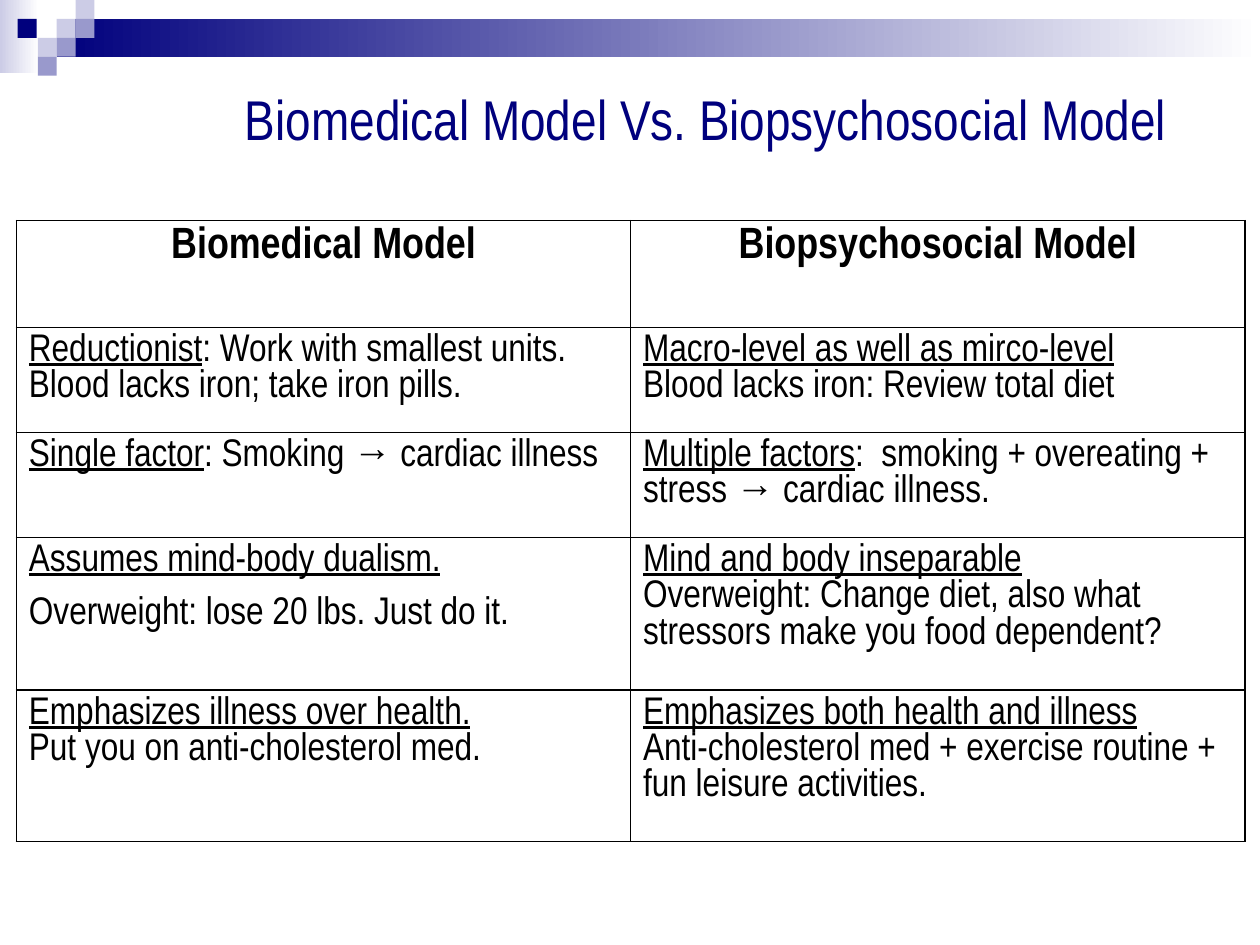
from dataclasses import dataclass

from lxml.etree import SubElement
from pptx import Presentation
from pptx.dml.color import RGBColor
from pptx.enum.shapes import MSO_SHAPE
from pptx.enum.text import MSO_ANCHOR, PP_ALIGN
from pptx.oxml.ns import qn
from pptx.util import Inches, Pt


@dataclass(frozen=True)
class Theme:
    font: str = "Arial Narrow"
    navy: RGBColor = RGBColor(0x00, 0x00, 0x7D)
    lavender: RGBColor = RGBColor(0xCC, 0xCC, 0xE6)
    violet: RGBColor = RGBColor(0x99, 0x99, 0xCC)
    white: RGBColor = RGBColor(0xFF, 0xFF, 0xFF)
    black: RGBColor = RGBColor(0x00, 0x00, 0x00)
    title_size: int = 32
    header_size: int = 25
    body_size: int = 22


theme = Theme()

presentation = Presentation()
presentation.slide_width = Inches(10)
presentation.slide_height = Inches(7.5)
slide = presentation.slides.add_slide(presentation.slide_layouts[6])


def add_block(left, top, width, height, color, fades=False):
    """Add a borderless rectangle, optionally fading to white on the right."""
    shape = slide.shapes.add_shape(
        MSO_SHAPE.RECTANGLE, Inches(left), Inches(top), Inches(width), Inches(height))
    shape.shadow.inherit = False
    shape.line.fill.background()
    if fades:
        shape.fill.gradient()
        shape.fill.gradient_angle = 0
        for stop, stop_color, position in zip(
                shape.fill.gradient_stops, (color, theme.white), (0, 1)):
            stop.color.rgb = stop_color
            stop.position = position
    else:
        shape.fill.solid()
        shape.fill.fore_color.rgb = color


def style_paragraph(paragraph, size, color, alignment=PP_ALIGN.LEFT, bold=False):
    paragraph.alignment = alignment
    paragraph.font.name = theme.font
    paragraph.font.size = Pt(size)
    paragraph.font.bold = bold
    paragraph.font.color.rgb = color


# Banner
add_block(0, 0, 0.31, 0.58, theme.lavender, fades=True)
add_block(0.45, 0.15, 9.55, 0.3, theme.navy, fades=True)
SQUARE = 0.15
for left, top, color in (
    (0.45, 0.15, theme.lavender),
    (0.6, 0, theme.lavender),
    (0.6, 0.15, theme.violet),
    (0.3, 0.3, theme.lavender),
    (0.14, 0.15, theme.navy),
    (0.45, 0.3, theme.violet),
    (0.3, 0.45, theme.violet),
):
    add_block(left, top, SQUARE, SQUARE, color)

# Title
title = slide.shapes.add_textbox(Inches(0.25), Inches(0.67), Inches(9.21), Inches(0.54))
title_frame = title.text_frame
title_frame.word_wrap = True
title_frame.vertical_anchor = MSO_ANCHOR.MIDDLE
title_frame.margin_left = Inches(1.5)
title_frame.margin_right = title_frame.margin_top = title_frame.margin_bottom = 0
title_frame.text = "Biomedical Model Vs. Biopsychosocial Model"
style_paragraph(title_frame.paragraphs[0], theme.title_size, theme.navy, PP_ALIGN.CENTER)

# Comparison table: each body cell is (underlined lead, rest of its line, next paragraph)
headers = ("Biomedical Model", "Biopsychosocial Model")
comparisons = (
    (("Reductionist", ": Work with smallest units.", "Blood lacks iron; take iron pills."),
     ("Macro-level as well as mirco-level", "", "Blood lacks iron: Review total diet")),
    (("Single factor", ": Smoking → cardiac illness", ""),
     ("Multiple factors", ":  smoking + overeating + stress → cardiac illness.", "")),
    (("Assumes mind-body dualism.", "", "Overweight: lose 20 lbs. Just do it."),
     ("Mind and body inseparable", "",
      "Overweight: Change diet, also what stressors make you food dependent?")),
    (("Emphasizes illness over health.", "", "Put you on anti-cholesterol med."),
     ("Emphasizes both health and illness", "",
      "Anti-cholesterol med + exercise routine + fun leisure activities.")),
)
row_heights = (0.85, 0.83, 0.83, 1.21, 1.2)

table = slide.shapes.add_table(
    len(row_heights), len(headers),
    Inches(0.13), Inches(1.75), Inches(9.75), Inches(sum(row_heights))).table
table.first_row = False
table.horz_banding = False
for row, height in zip(table.rows, row_heights):
    row.height = Inches(height)

for column_index, header in enumerate(headers):
    header_cell = table.cell(0, column_index)
    header_cell.text = header
    style_paragraph(header_cell.text_frame.paragraphs[0], theme.header_size,
                    theme.black, PP_ALIGN.CENTER, bold=True)

for row_index, comparison in enumerate(comparisons, start=1):
    for column_index, (lead, rest, detail) in enumerate(comparison):
        text_frame = table.cell(row_index, column_index).text_frame
        paragraph = text_frame.paragraphs[0]
        lead_run = paragraph.add_run()
        lead_run.text = lead
        lead_run.font.underline = True
        if rest:
            paragraph.add_run().text = rest
        if detail:
            text_frame.add_paragraph().text = detail
        for paragraph in text_frame.paragraphs:
            style_paragraph(paragraph, theme.body_size, theme.black)

# The dualism example stands a little below its heading
table.cell(3, 0).text_frame.paragraphs[1].space_before = Pt(9.5)

for cell in table.iter_cells():
    properties = cell._tc.get_or_add_tcPr()
    for side in ("a:lnL", "a:lnR", "a:lnT", "a:lnB"):
        border = SubElement(properties, qn(side), w=str(Pt(1)))
        border_fill = SubElement(border, qn("a:solidFill"))
        SubElement(border_fill, qn("a:srgbClr"), val=str(theme.black))
    cell.fill.background()

presentation.save("out.pptx")
